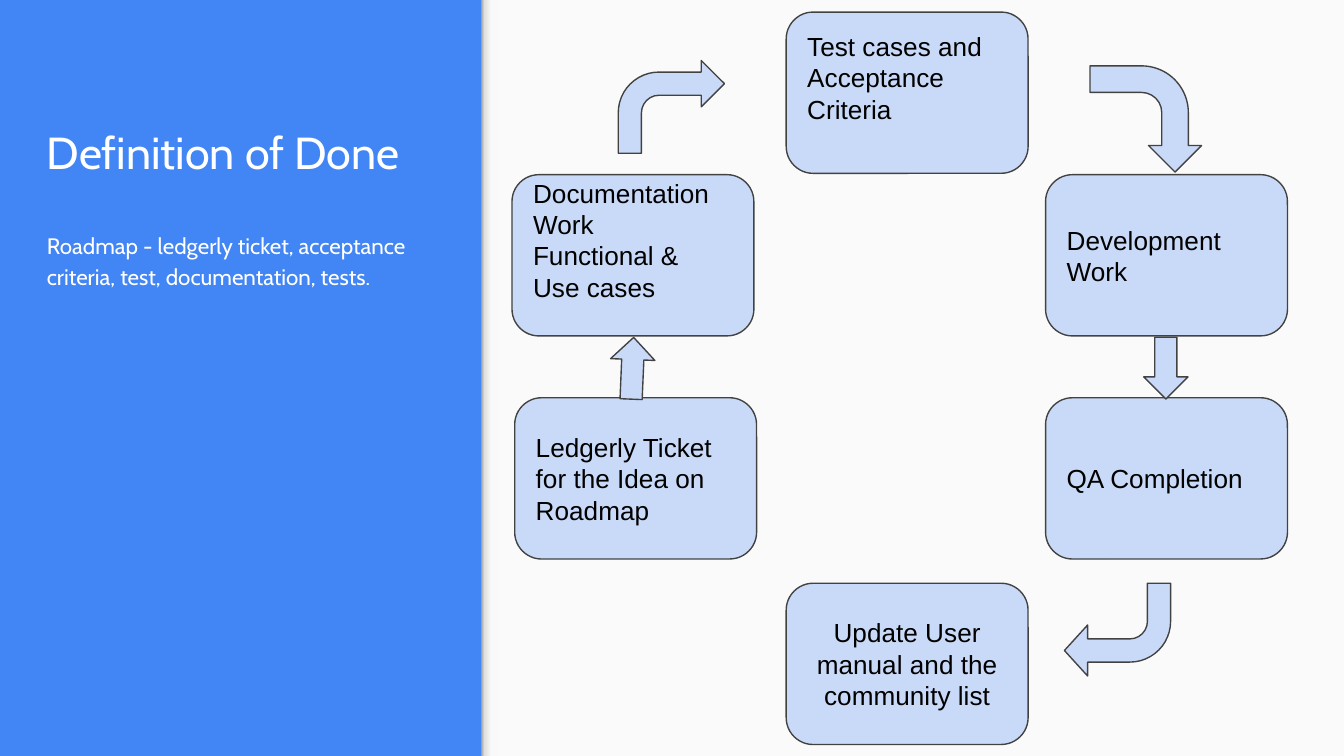
from dataclasses import dataclass

from lxml.etree import SubElement
from pptx import Presentation
from pptx.dml.color import RGBColor
from pptx.enum.shapes import MSO_SHAPE
from pptx.enum.text import MSO_ANCHOR, PP_ALIGN
from pptx.oxml.ns import qn
from pptx.util import Inches, Pt


@dataclass(frozen=True)
class Theme:
    blue: str = "4285F4"
    panel: str = "FAFAFA"
    step: str = "C9DAF8"
    outline: str = "424242"
    white: str = "FFFFFF"
    black: str = "000000"
    edge_stops: tuple = ((0, "999999"), (20, "DEDEDE"), (64, "F9F9F9"), (100, "F9F9F9"))
    heading_font: str = "Cabin"
    step_font: str = "Arial"
    title_size: int = 24
    body_size: int = 12
    step_size: int = 14
    line_width: float = 0.75


THEME = Theme()
WIDTH = 10
HEIGHT = WIDTH * 9 / 16
SIDEBAR = 3.58
INSET = 0.1
STEP_WIDTH, STEP_HEIGHT = 1.8, 1.2
MIDDLE, RIGHT = 5.85, 7.78
TOP_ROW, UPPER_ROW, LOWER_ROW, BOTTOM_ROW = 0.09, 1.3, 2.96, 4.34

# Right and bottom insets of a step's text
EVEN = (INSET, INSET)
RAISED = (0.15, 0.33)

# Left, top, paragraphs, insets, alignment
STEPS = [
    (3.81, UPPER_ROW, ["Documentation Work", "Functional & Use cases"], RAISED, PP_ALIGN.LEFT),
    (MIDDLE, TOP_ROW, ["Test cases and Acceptance Criteria"], RAISED, PP_ALIGN.LEFT),
    (3.83, LOWER_ROW, ["Ledgerly Ticket for the Idea on Roadmap"], EVEN, PP_ALIGN.LEFT),
    (RIGHT, UPPER_ROW, ["Development Work"], EVEN, PP_ALIGN.LEFT),
    (RIGHT, LOWER_ROW, ["QA Completion"], EVEN, PP_ALIGN.LEFT),
    (MIDDLE, BOTTOM_ROW, ["Update User manual and the community list"], EVEN, PP_ALIGN.CENTER),
]

# Left, top, width, height, rotation, half width of the head
BENT_ARROWS = [
    (4.6, 0.45, 0.79, 0.69, 0, 0.25),
    (7.92, 4.34, 0.79, 0.69, 180, 0.275),
    (8.13, 0.47, 0.79, 0.83, 90, 0.25),
]

# Left, rotation
STRAIGHT_ARROWS = [(8.51, 0), (4.54, 182.4)]


def add_block(page, kind, left, top, width, height, fill=None, outlined=False):
    block = page.shapes.add_shape(
        kind, Inches(left), Inches(top), Inches(width), Inches(height))
    block.shadow.inherit = False
    if fill:
        block.fill.solid()
        block.fill.fore_color.rgb = RGBColor.from_string(fill)
    if outlined:
        block.line.color.rgb = RGBColor.from_string(THEME.outline)
        block.line.width = Pt(THEME.line_width)
    else:
        block.line.fill.background()
    return block


def add_edge_shadow(page):
    edge = add_block(page, MSO_SHAPE.RECTANGLE, SIDEBAR, 0, 0.12, HEIGHT)
    edge.fill.gradient()
    edge.fill.gradient_angle = 0
    # Swap the two default stops for the four of the theme
    stops = edge.fill._fill._gradFill.find(qn("a:gsLst"))
    for stop in list(stops):
        stops.remove(stop)
    for percent, color in THEME.edge_stops:
        stop = SubElement(stops, qn("a:gs"), pos=str(percent * 1000))
        SubElement(stop, qn("a:srgbClr"), val=color)


def write_text(box, lines, font, size, color, anchor, align=PP_ALIGN.LEFT, insets=EVEN):
    frame = box.text_frame
    frame.word_wrap = True
    frame.vertical_anchor = anchor
    frame.margin_left = frame.margin_top = Inches(INSET)
    frame.margin_right, frame.margin_bottom = map(Inches, insets)
    for index, line in enumerate(lines):
        para = frame.add_paragraph() if index else frame.paragraphs[0]
        para.alignment = align
        span = para.add_run()
        span.text = line
        span.font.name = font
        span.font.size = Pt(size)
        span.font.color.rgb = RGBColor.from_string(color)
    return frame


def add_sidebar_text(page, top, height, text, size, anchor):
    box = page.shapes.add_textbox(
        Inches(0.25), Inches(top), Inches(3.07), Inches(height))
    return write_text(box, [text], THEME.heading_font, size, THEME.white, anchor)


def add_step(page, left, top, lines, insets, align):
    box = add_block(page, MSO_SHAPE.ROUNDED_RECTANGLE, left, top,
                    STEP_WIDTH, STEP_HEIGHT, THEME.step, outlined=True)
    write_text(box, lines, THEME.step_font, THEME.step_size, THEME.black,
               MSO_ANCHOR.MIDDLE, align, insets)


def add_arrow(page, kind, left, top, width, height, rotation, adjustments):
    arrow = add_block(page, kind, left, top, width, height, THEME.step, outlined=True)
    arrow.rotation = rotation
    for index, value in enumerate(adjustments):
        arrow.adjustments[index] = value


def main():
    deck = Presentation()
    deck.slide_width, deck.slide_height = Inches(WIDTH), Inches(HEIGHT)
    page = deck.slides.add_slide(deck.slide_layouts[6])

    # Blue sidebar with a light panel beside it
    page.background.fill.solid()
    page.background.fill.fore_color.rgb = RGBColor.from_string(THEME.blue)
    add_block(page, MSO_SHAPE.RECTANGLE, SIDEBAR, 0, WIDTH - SIDEBAR, HEIGHT, THEME.panel)
    add_edge_shadow(page)

    # Title and summary
    add_sidebar_text(page, 0.39, 1.04, "Definition of Done",
                     THEME.title_size, MSO_ANCHOR.BOTTOM)
    summary = add_sidebar_text(
        page, 1.6, 3.46,
        "Roadmap - ledgerly ticket, acceptance criteria, test, documentation, tests.",
        THEME.body_size, MSO_ANCHOR.TOP)
    summary.paragraphs[0].line_spacing = 1.15
    summary.paragraphs[0].space_after = Pt(12)

    # Steps of the cycle
    for step in STEPS:
        add_step(page, *step)

    # Arrows between the steps
    for *place, head in BENT_ARROWS:
        add_arrow(page, MSO_SHAPE.BENT_ARROW, *place, (0.25, head, 0.25, 0.44))
    for left, rotation in STRAIGHT_ARROWS:
        add_arrow(page, MSO_SHAPE.DOWN_ARROW, left, 2.51, 0.33, 0.46, rotation, (0.5, 0.5))

    deck.save("out.pptx")


if __name__ == "__main__":
    main()
